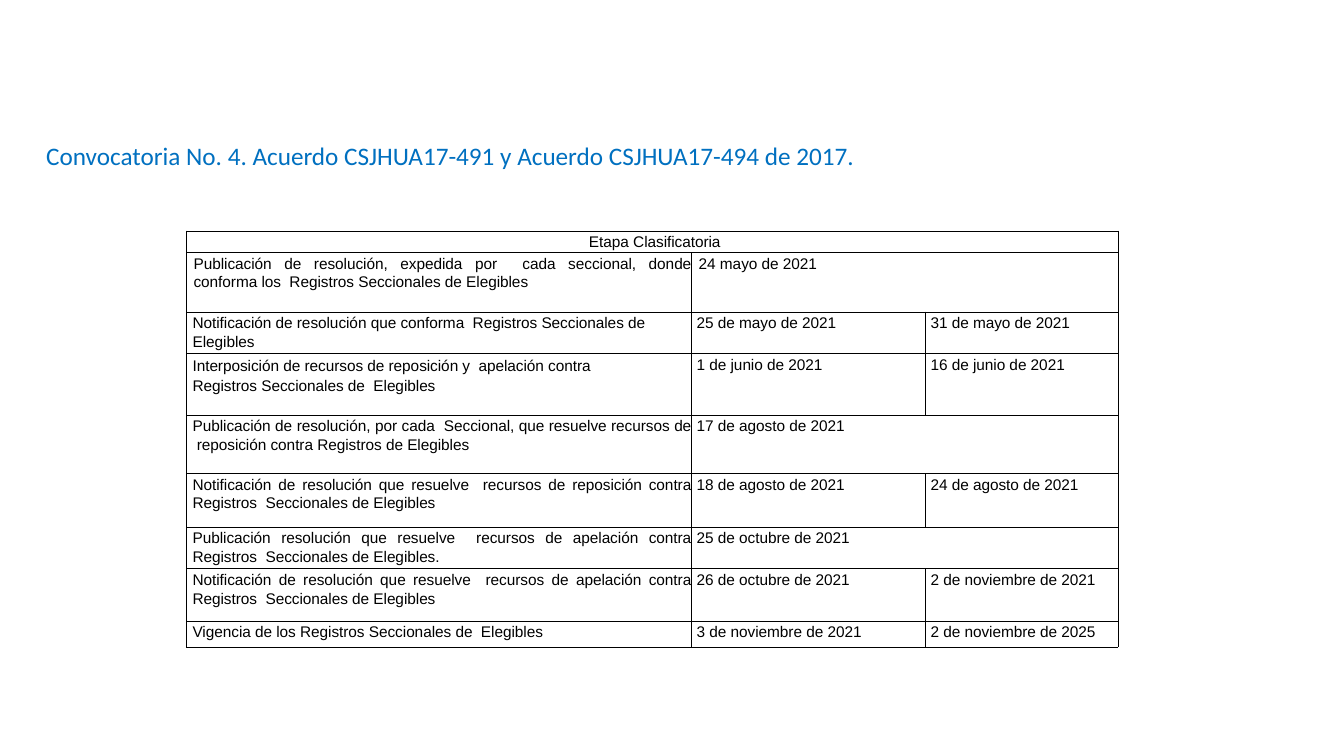
from lxml import etree
from pptx import Presentation
from pptx.dml.color import RGBColor
from pptx.enum import text
from pptx.oxml.ns import qn
from pptx.util import Inches, Pt

BLACK = RGBColor(0x00, 0x00, 0x00)
BLUE = RGBColor(0x00, 0x70, 0xC0)
LEFT, CENTER, JUSTIFY = (text.PP_ALIGN.LEFT, text.PP_ALIGN.CENTER,
                         text.PP_ALIGN.JUSTIFY)

COLUMN_WIDTHS = [5.01, 2.32, 1.91]
HEADER_HEIGHT = 0.2
# Row height, alignment of the stage, stage, dates (a single date spans two columns)
STAGES = [
    (0.59, JUSTIFY, "Publicación de resolución, expedida por  cada seccional, "
     "donde conforma los  Registros Seccionales de Elegibles",
     ["24 mayo de 2021"]),
    (0.39, LEFT, "Notificación de resolución que conforma  Registros "
     "Seccionales de Elegibles",
     ["25 de mayo de 2021", "31 de mayo de 2021"]),
    (0.61, LEFT, "Interposición de recursos de reposición y  apelación contra\n"
     "Registros Seccionales de  Elegibles",
     ["1 de junio de 2021", "16 de junio de 2021"]),
    (0.58, JUSTIFY, "Publicación de resolución, por cada  Seccional, que "
     "resuelve recursos de  reposición contra Registros de Elegibles",
     ["17 de agosto de 2021"]),
    (0.53, JUSTIFY, "Notificación de resolución que resuelve  recursos de "
     "reposición contra Registros  Seccionales de Elegibles",
     ["18 de agosto de 2021", "24 de agosto de 2021"]),
    (0.39, JUSTIFY, "Publicación resolución que resuelve  recursos de "
     "apelación contra Registros  Seccionales de Elegibles.",
     ["25 de octubre de 2021"]),
    (0.52, JUSTIFY, "Notificación de resolución que resuelve  recursos de "
     "apelación contra Registros  Seccionales de Elegibles",
     ["26 de octubre de 2021", "2 de noviembre de 2021"]),
    (0.26, LEFT, "Vigencia de los Registros Seccionales de  Elegibles",
     ["3 de noviembre de 2021", "2 de noviembre de 2025"]),
]


def style_cell(cell):
    """Clear the fill and margins of a cell and give it thin black borders."""
    cell.margin_left = cell.margin_right = cell.margin_bottom = 0
    cell.fill.background()
    properties = cell._tc.get_or_add_tcPr()
    for position, side in enumerate(("lnL", "lnR", "lnT", "lnB")):
        border = etree.Element(qn(f"a:{side}"), w=str(Pt(0.5)))
        fill = etree.SubElement(border, qn("a:solidFill"))
        etree.SubElement(fill, qn("a:srgbClr"), val=str(BLACK))
        properties.insert(position, border)


def write_cell(cell, content, top, indent, align=LEFT, spacings=(1.0,)):
    """Write one paragraph per line of content, each with its line spacing."""
    cell.margin_top = Inches(top)
    frame = cell.text_frame
    for number, (line, spacing) in enumerate(zip(content.split("\n"), spacings)):
        paragraph = frame.add_paragraph() if number else frame.paragraphs[0]
        paragraph.alignment = align
        paragraph.line_spacing = spacing
        paragraph._p.get_or_add_pPr().set("marL", str(Inches(indent)))
        run = paragraph.add_run()
        run.text = line
        run.font.name = "Arial"
        run.font.size = Pt(11)
        run.font.color.rgb = BLACK
        run.font._element.set("spc", "-5")


prs = Presentation()
prs.slide_width, prs.slide_height = Inches(13.33), Inches(7.5)
slide = prs.slides.add_slide(prs.slide_layouts[6])

# Heading
heading = slide.shapes.add_textbox(Inches(0.36), Inches(1.38),
                                   Inches(12.23), Inches(5.54)).text_frame
heading.word_wrap = True
heading.paragraphs[0].line_spacing = 0.9
call = heading.paragraphs[0].add_run()
call.text = "Convocatoria No. 4. Acuerdo CSJHUA17-491 y Acuerdo CSJHUA17-494 de 2017."
call.font.name = "Calibri"
call.font.size = Pt(18)
call.font.color.rgb = BLUE

# Schedule
row_heights = [HEADER_HEIGHT] + [stage[0] for stage in STAGES]
schedule = slide.shapes.add_table(
    len(row_heights), len(COLUMN_WIDTHS), Inches(1.85), Inches(2.29),
    Inches(sum(COLUMN_WIDTHS)), Inches(sum(row_heights))).table
schedule.first_row = schedule.horz_banding = False
for column, width in zip(schedule.columns, COLUMN_WIDTHS):
    column.width = Inches(width)
for row, height in zip(schedule.rows, row_heights):
    row.height = Inches(height)
    for cell in row.cells:
        style_cell(cell)

schedule.cell(0, 0).merge(schedule.cell(0, 2))
write_cell(schedule.cell(0, 0), "Etapa Clasificatoria", 0.03, 0.05, CENTER)

for row, (_, align, stage, dates) in enumerate(STAGES, start=1):
    indent = 0.07 if row == 1 else 0.06
    if "\n" in stage:
        top, spacings = 0.04, (Pt(12.4), Pt(14.3))
    else:
        top, spacings = 0.01, (1.1,)
    write_cell(schedule.cell(row, 0), stage, top, indent, align, spacings)
    if len(dates) == 1:
        schedule.cell(row, 1).merge(schedule.cell(row, 2))
    for column, date in enumerate(dates, start=1):
        write_cell(schedule.cell(row, column), date, 0.03,
                   0.07 if row == 1 else 0.05)

prs.save("out.pptx")
